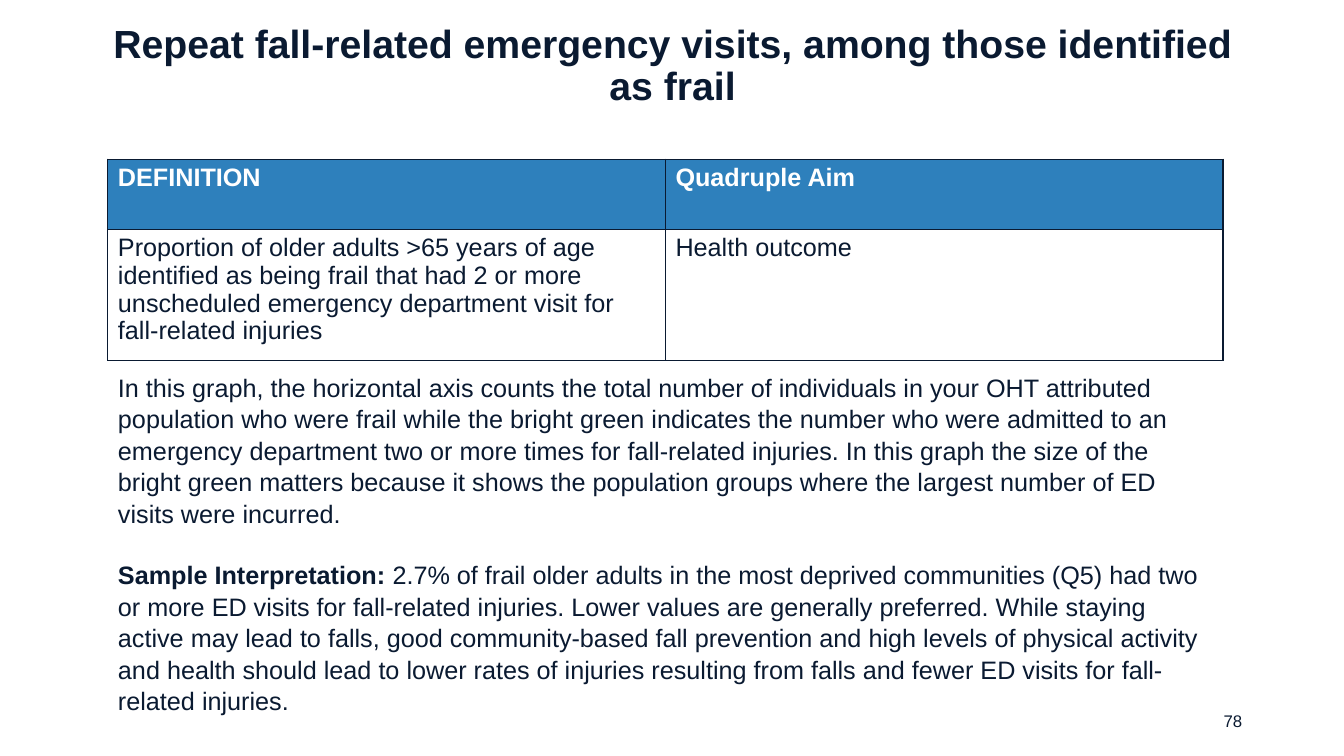
from lxml import etree
from pptx import Presentation
from pptx.dml.color import RGBColor
from pptx.enum.text import MSO_ANCHOR, MSO_AUTO_SIZE, PP_ALIGN
from pptx.oxml.ns import qn
from pptx.util import Inches, Pt

MIDDLE, TOP = MSO_ANCHOR.MIDDLE, MSO_ANCHOR.TOP
CENTER, LEFT, RIGHT = PP_ALIGN.CENTER, PP_ALIGN.LEFT, PP_ALIGN.RIGHT
FIXED, GROW = MSO_AUTO_SIZE.NONE, MSO_AUTO_SIZE.SHAPE_TO_FIT_TEXT

FONT = "Arial"
NAVY, BLUE, WHITE = "0A1A31", "2E80BC", "FFFFFF"

TITLE = "Repeat fall-related emergency visits, among those identified as frail"
TABLE_ROWS = [
    ["DEFINITION", "Quadruple Aim"],
    ["Proportion of older adults >65 years of age identified as being frail that "
     "had 2 or more unscheduled emergency department visit for fall-related injuries",
     "Health outcome"],
]
ROW_HEIGHTS = [0.7, 1.3]
# Each paragraph is a list of (text, bold) spans
BODY = [
    [("In this graph, the horizontal axis counts the total number of individuals "
      "in your OHT attributed population who were frail while the bright green "
      "indicates the number who were admitted to an emergency department two or "
      "more times for fall-related injuries. In this graph the size of "
      "the bright green matters because it shows the population groups where "
      "the largest number of ED visits were incurred.", False)],
    [("Sample Interpretation: ", True),
     ("2.7% of frail older adults in the most deprived communities (Q5) had two or "
      "more ED visits for fall-related injuries. Lower values are generally "
      "preferred. While staying active may lead to falls, good community-based fall "
      "prevention and high levels of physical activity and health should lead to "
      "lower rates of injuries resulting from falls and fewer ED visits for "
      "fall-related injuries.", False)],
]


def color(value):
    return RGBColor.from_string(value)


def style_para(para, size, fill=NAVY, bold=False, align=LEFT, spacing=1.0, before=0):
    para.alignment = align
    para.line_spacing = spacing
    para.space_before, para.space_after = Pt(before), Pt(0)
    for span in para.runs:
        style_span(span, size, fill, bold)


def style_span(span, size, fill, bold):
    span.font.name, span.font.size, span.font.bold = FONT, Pt(size), bold
    span.font.color.rgb = color(fill)


def place(shape, box, anchor, auto_size):
    shape.left, shape.top, shape.width, shape.height = map(Inches, box)
    frame = shape.text_frame
    frame.word_wrap, frame.auto_size = True, auto_size
    frame.vertical_anchor = anchor
    return frame


def add_border(cell, value, width):
    properties = cell._tc.get_or_add_tcPr()
    for index, side in enumerate(("lnL", "lnR", "lnT", "lnB")):
        line = etree.Element(qn(f"a:{side}"), w=str(Pt(width)))
        fill = etree.SubElement(line, qn("a:solidFill"))
        etree.SubElement(fill, qn("a:srgbClr"), val=value)
        properties.insert(index, line)


def add_title(page, box):
    frame = place(page.shapes.title, box, MIDDLE, FIXED)
    frame.text = TITLE
    style_para(frame.paragraphs[0], 28, bold=True, align=CENTER, spacing=0.9)


def add_definition_table(page, box):
    table = page.shapes.add_table(len(TABLE_ROWS), len(TABLE_ROWS[0]),
                                  *map(Inches, box)).table
    for row, height in zip(table.rows, ROW_HEIGHTS):
        row.height = Inches(height)
    for row_index, texts in enumerate(TABLE_ROWS):
        header = row_index == 0
        for column_index, text in enumerate(texts):
            cell = table.cell(row_index, column_index)
            cell.text = text
            cell.fill.solid()
            cell.fill.fore_color.rgb = color(BLUE if header else WHITE)
            add_border(cell, NAVY, 1)
            style_para(cell.text_frame.paragraphs[0], 18,
                       WHITE if header else NAVY, header, spacing=0.98)


def add_explanation(page, box):
    frame = place(page.placeholders[1], box, TOP, GROW)
    for index, spans in enumerate(BODY):
        para = frame.add_paragraph() if index else frame.paragraphs[0]
        # Plain paragraphs: no bullet, no hanging indent
        properties = para._p.get_or_add_pPr()
        properties.set("marL", "0")
        properties.set("indent", "0")
        etree.SubElement(properties, qn("a:buNone"))
        para.font.size = Pt(18)
        style_para(para, 18, spacing=1.04, before=21.6 if index else 0)
        for text, bold in spans:
            span = para.add_run()
            span.text = text
            style_span(span, 18, NAVY, bold)


def add_page_number(page, box):
    frame = place(page.shapes.add_textbox(*map(Inches, box)), box, MIDDLE, FIXED)
    frame.text = "78"
    style_para(frame.paragraphs[0], 12, align=RIGHT)


def main():
    deck = Presentation()
    deck.slide_width, deck.slide_height = Inches(13.33), Inches(7.5)
    page = deck.slides.add_slide(deck.slide_layouts[1])
    add_page_number(page, (9.42, 6.95, 3, 0.4))
    add_title(page, (0.77, 0.24, 11.8, 0.84))
    add_definition_table(page, (1.07, 1.58, 11.06, sum(ROW_HEIGHTS)))
    add_explanation(page, (1.07, 3.63, 11.06, 3.43))
    deck.save("out.pptx")


if __name__ == "__main__":
    main()
